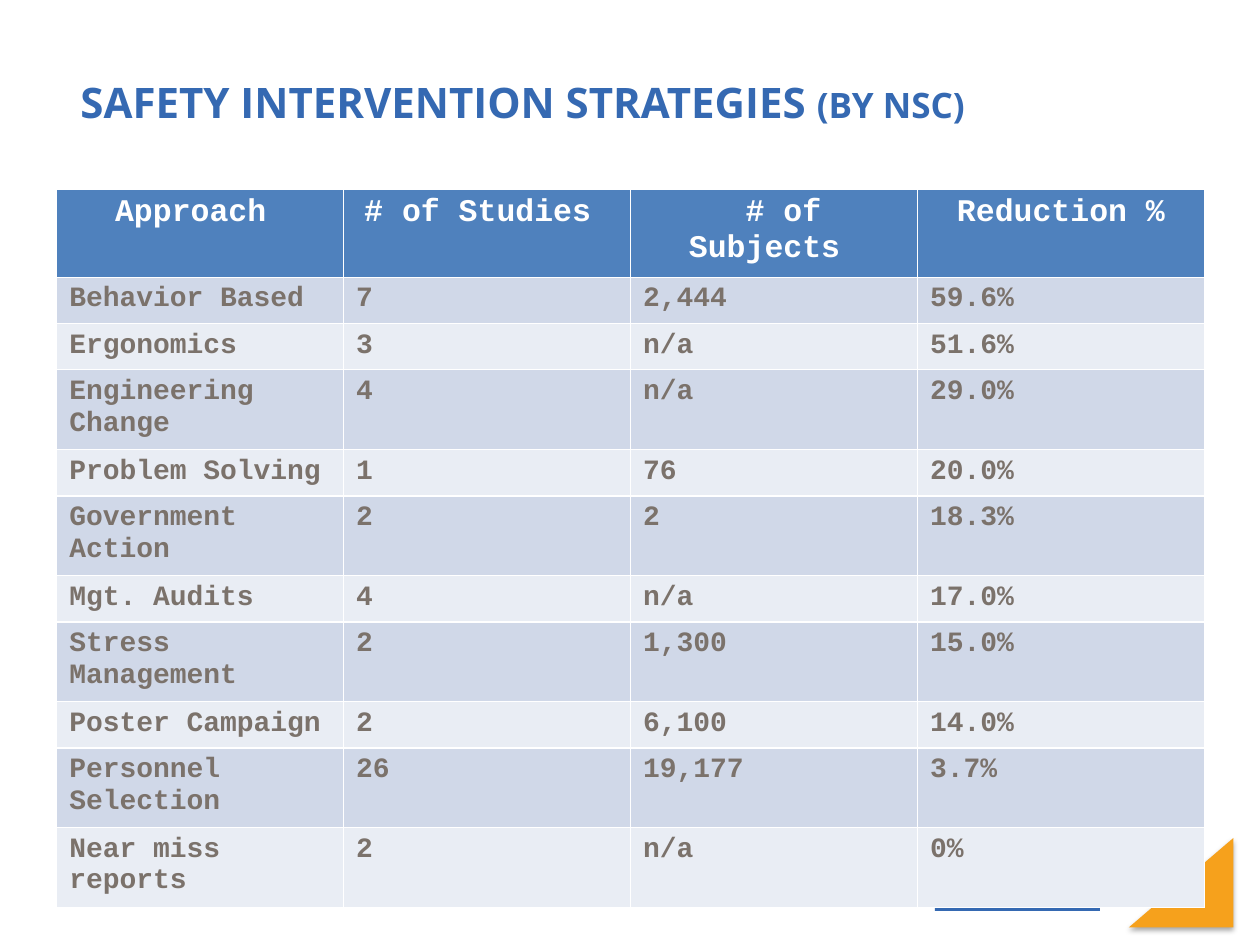
"""Build a slide comparing safety intervention strategies in a table."""
from lxml import etree
from pptx import Presentation
from pptx.dml.color import RGBColor
from pptx.enum.shapes import MSO_SHAPE as Shape
from pptx.enum.text import MSO_ANCHOR as Anchor, PP_ALIGN as Align
from pptx.oxml import parse_xml
from pptx.util import Inches, Pt

BLUE = RGBColor(0x35, 0x69, 0xB2)
ORANGE = RGBColor(0xF6, 0xA1, 0x1C)
WHITE = RGBColor(0xFF, 0xFF, 0xFF)
BROWN = RGBColor(0x7B, 0x72, 0x6B)
HEADER_FILL = RGBColor(0x4F, 0x81, 0xBD)
BAND_FILLS = (RGBColor(0xE9, 0xED, 0xF4), RGBColor(0xD0, 0xD8, 0xE8))

TITLE = (("SAFETY INTERVENTION STRATEGIES ", 24), ("(BY NSC)", 20))
HEADERS = ("Approach ", "# of Studies ", " # of Subjects ", "Reduction %")
STUDIES = (
    ("Behavior Based", "7", "2,444", "59.6%"),
    ("Ergonomics", "3", "n/a", "51.6%"),
    ("Engineering Change", "4", "n/a", "29.0%"),
    ("Problem Solving", "1", "76", "20.0%"),
    ("Government Action", "2", "2", "18.3%"),
    ("Mgt. Audits", "4", "n/a", "17.0%"),
    ("Stress Management", "2", "1,300", "15.0%"),
    ("Poster Campaign", "2", "6,100", "14.0%"),
    ("Personnel Selection", "26", "19,177", "3.7%"),
    ("Near miss reports", "2", "n/a", "0%"),
)
HEADER_FONT = {"name": "Courier New", "size": Pt(18), "bold": True}
BODY_FONT = {**HEADER_FONT, "size": Pt(16)}
TITLE_FONT = {"name": "Open Sans", "bold": True}
HEADER_HEIGHT, ROW_HEIGHT = 0.65, 0.35
DRAWING = "http://schemas.openxmlformats.org/drawingml/2006/main"
SHADOW = (
    f'<a:effectLst xmlns:a="{DRAWING}">'
    '<a:outerShdw blurRad="39370" dist="22860" dir="5400000" rotWithShape="0">'
    '<a:srgbClr val="000000"><a:alpha val="35000"/></a:srgbClr>'
    "</a:outerShdw></a:effectLst>"
)


def add_span(para, text, color, formats):
    span = para.add_run()
    span.text = text
    for name, value in formats.items():
        setattr(span.font, name, value)
    span.font.color.rgb = color


def add_plain_shape(page, kind, place, color):
    shape = page.shapes.add_shape(kind, *map(Inches, place))
    shape.shadow.inherit = False
    shape.fill.solid()
    shape.fill.fore_color.rgb = color
    shape.line.fill.background()
    return shape


def add_corner(page):
    add_plain_shape(page, Shape.RECTANGLE, (7.42, 6.98, 1.31, 0.25), BLUE)
    corner = add_plain_shape(
        page, Shape.RIGHT_TRIANGLE, (9.02, 6.59, 0.71, 0.83), ORANGE
    )
    corner.rotation = 270
    properties = corner.element.spPr
    properties.replace(
        properties.find(etree.QName(DRAWING, "effectLst").text), parse_xml(SHADOW)
    )


def add_title(page):
    box = page.shapes.add_textbox(*map(Inches, (0.54, 0.18, 9.11, 1.25)))
    frame = box.text_frame
    frame.word_wrap = True
    frame.vertical_anchor = Anchor.MIDDLE
    for text, size in TITLE:
        add_span(frame.paragraphs[0], text, BLUE, {**TITLE_FONT, "size": Pt(size)})


def add_study_table(page):
    records = (HEADERS, *STUDIES)
    height = HEADER_HEIGHT + ROW_HEIGHT * len(STUDIES)
    table = page.shapes.add_table(
        len(records), len(HEADERS), *map(Inches, (0.45, 1.5, 9.11, height))
    ).table
    for index, record in enumerate(records):
        is_header = index == 0
        table.rows[index].height = Inches(HEADER_HEIGHT if is_header else ROW_HEIGHT)
        for cell, text in zip(table.rows[index].cells, record):
            cell.fill.solid()
            cell.fill.fore_color.rgb = HEADER_FILL if is_header else BAND_FILLS[index % 2]
            para = cell.text_frame.paragraphs[0]
            para.alignment = Align.CENTER if is_header else Align.LEFT
            add_span(
                para,
                text,
                WHITE if is_header else BROWN,
                HEADER_FONT if is_header else BODY_FONT,
            )


def main():
    deck = Presentation()
    deck.slide_width, deck.slide_height = Inches(10), Inches(7.5)
    page = deck.slides.add_slide(deck.slide_layouts[6])
    add_corner(page)
    add_title(page)
    add_study_table(page)
    deck.save("out.pptx")


if __name__ == "__main__":
    main()
